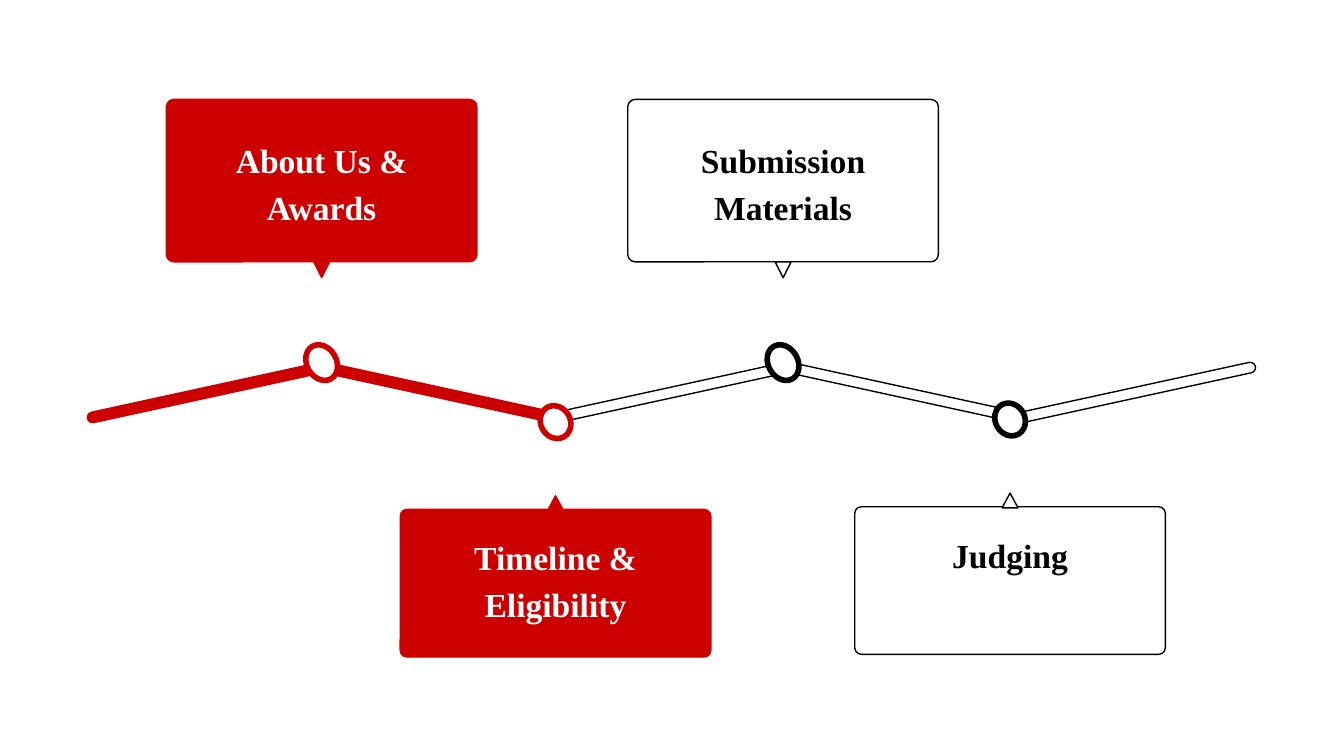
from pptx import Presentation
from pptx.dml.color import RGBColor as RGB
from pptx.enum.shapes import MSO_SHAPE as Kind
from pptx.enum.text import MSO_ANCHOR as Anchor, PP_ALIGN as Align
from pptx.util import Cm, Pt

HUES = {"red": "CC0000", "black": "000000", "white": "FFFFFF"}
BAR_X, BAR_Y, BAR_W, BAR_H = 1.6, 7.32, 4.62, 0.2
PITCH, TILT = 4.39, 12.3
CARD_W, PAD = 5.87, 0.16
TIP_W, DOT_W, DOT_TURN = 0.3, 0.56, 330.2

# Label, centre x, card top, above the line, done
STEPS = [
    ("About Us & Awards", 6.08, 1.88, True, True),
    ("Timeline & Eligibility", 10.5, 9.63, False, True),
    ("Submission Materials", 14.8, 1.88, True, False),
    ("Judging", 19.09, 9.58, False, False),
]


def hue(name):
    return RGB.from_string(HUES[name])


def write(shape, text, color="black", size=18, bold=True, anchor=Anchor.TOP):
    frame = shape.text_frame
    frame.word_wrap = True
    frame.vertical_anchor = anchor
    frame.margin_left = frame.margin_right = Cm(0.25)
    frame.margin_top = frame.margin_bottom = Cm(0.25)
    para = frame.paragraphs[0]
    para.alignment = Align.CENTER
    para.line_spacing = 1.15
    para.space_after = Pt(16)
    run = para.add_run()
    run.text = text
    font = run.font
    font.name, font.size, font.bold = "Times New Roman", Pt(size), bold
    font.color.rgb = hue(color)


class Deck:
    """Holds the line style and the current slide."""

    def __init__(self, slide, thin=0.75, thick=3):
        self.slide, self.thin, self.thick = slide, thin, thick

    def form(self, kind, left, top, width, height, fill, line,
             weight=None, turn=0, bend=None):
        shape = self.slide.shapes.add_shape(
            kind, Cm(left), Cm(top), Cm(width), Cm(height))
        shape.shadow.inherit = False
        shape.fill.solid()
        shape.fill.fore_color.rgb = hue(fill)
        shape.line.color.rgb = hue(line)
        shape.line.width = Pt(weight or self.thin)
        shape.rotation = turn
        if bend is not None:
            shape.adjustments[0] = bend
        return shape

    def bar(self, index, fill, line):
        turn = TILT if index % 2 else 360 - TILT
        self.form(Kind.ROUNDED_RECTANGLE, BAR_X + index * PITCH, BAR_Y,
                  BAR_W, BAR_H, fill, line, turn=turn, bend=0.5)

    def dot(self, mid, top, height, line):
        self.form(Kind.OVAL, mid - DOT_W / 2, top, DOT_W, height,
                  "white", line, weight=self.thick, turn=DOT_TURN)

    def card(self, text, mid, top, height, fill, line, color, anchor):
        left = mid - CARD_W / 2
        self.form(Kind.ROUNDED_RECTANGLE, left, top, CARD_W, height,
                  fill, line, bend=0.045)
        label = self.form(Kind.RECTANGLE, left + PAD, top + PAD,
                          CARD_W - 2 * PAD, height - 2 * PAD, fill, fill)
        write(label, text, color=color, anchor=anchor)

    def tip(self, mid, top, height, fill, line, turn):
        self.form(Kind.ISOSCELES_TRIANGLE, mid - TIP_W / 2, top,
                  TIP_W, height, fill, line, turn=turn)

    def step(self, text, mid, top, above, done):
        fill, line, color = (("red", "red", "white") if done
                             else ("white", "black", "black"))
        if above:
            high, anchor = 3.07, Anchor.MIDDLE
            dot_top, dot_h = top + 4.62, 0.71
            tip_top, tip_h, turn = top + high, 0.3, 180
        else:
            high, anchor = 2.79, Anchor.TOP
            dot_top, dot_h = top - 1.97, 0.64
            tip_top, tip_h, turn = top - 0.26, 0.28, 0
        self.dot(mid, dot_top, dot_h, line)
        self.card(text, mid, top, high, fill, line, color, anchor)
        self.tip(mid, tip_top, tip_h, fill, line, turn)


def main():
    prs = Presentation()
    prs.slide_width, prs.slide_height = Cm(25.4), Cm(14.29)
    deck = Deck(prs.slides.add_slide(prs.slide_layouts[6]))

    # Right to left, so that each dot covers the bars it joins
    deck.bar(4, "white", "black")
    for index in reversed(range(len(STEPS))):
        if index < 2:
            deck.bar(index, "red", "red")
        else:
            deck.bar(index, "white", "black")
        deck.step(*STEPS[index])
    prs.save("out.pptx")


if __name__ == "__main__":
    main()
